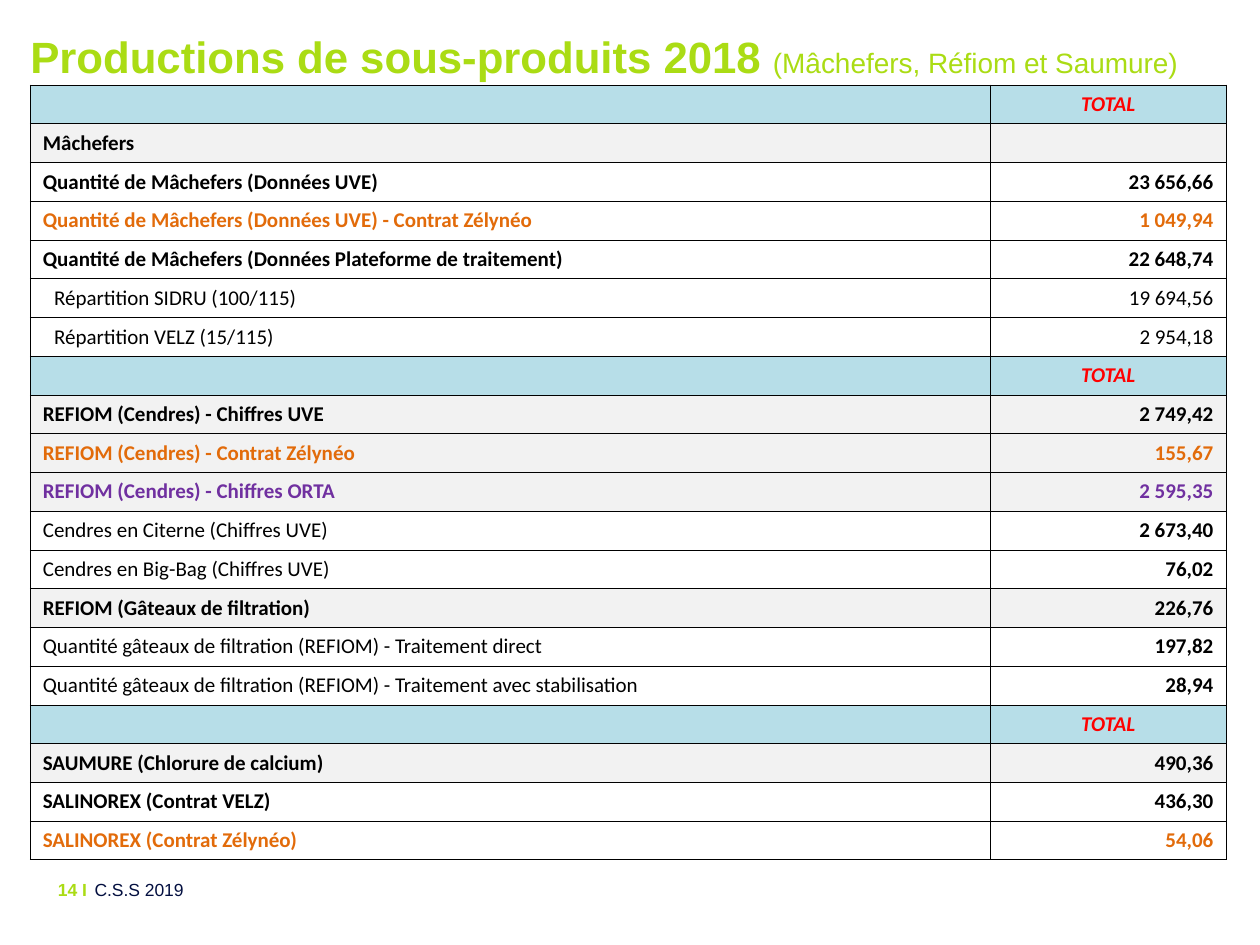
from lxml.etree import SubElement
from pptx import Presentation
from pptx.dml.color import RGBColor
from pptx.enum.text import MSO_ANCHOR as Anchor, PP_ALIGN as Align
from pptx.oxml.ns import qn
from pptx.util import Inches, Pt

WIDTH, HEIGHT = 10, 7.5
GREEN, NAVY, BLACK, RED = "AADC14", "030F40", "000000", "FF0000"
ORANGE, PURPLE = "E26B0A", "7030A0"
BLUE_FILL, GREY_FILL, WHITE_FILL = "B7DEE8", "F2F2F2", "FFFFFF"
LABEL_SHARE = 0.803
TABLE_FONT_SIZE = 12

HEADER = ("", "TOTAL", BLUE_FILL, RED, True, True)


def section(label, value, color=BLACK):
    return label, value, GREY_FILL, color, True, True


def entry(label, value, color=BLACK, bold_label=True, bold_value=True):
    return label, value, WHITE_FILL, color, bold_label, bold_value


ROWS = [
    HEADER,
    section("Mâchefers", ""),
    entry("Quantité de Mâchefers (Données UVE)", "23 656,66"),
    entry("Quantité de Mâchefers (Données UVE) - Contrat Zélynéo", "1 049,94", ORANGE),
    entry("Quantité de Mâchefers (Données Plateforme de traitement)", "22 648,74"),
    entry("Répartition SIDRU (100/115)", "19 694,56", BLACK, False, False),
    entry("Répartition VELZ (15/115)", "2 954,18", BLACK, False, False),
    HEADER,
    section("REFIOM (Cendres) - Chiffres UVE", "2 749,42"),
    section("REFIOM (Cendres) - Contrat Zélynéo", "155,67", ORANGE),
    section("REFIOM (Cendres) - Chiffres ORTA", "2 595,35", PURPLE),
    entry("Cendres en Citerne (Chiffres UVE)", "2 673,40", BLACK, False),
    entry("Cendres en Big-Bag (Chiffres UVE)", "76,02", BLACK, False),
    section("REFIOM (Gâteaux de filtration)", "226,76"),
    entry("Quantité gâteaux de filtration (REFIOM) - Traitement direct", "197,82", BLACK, False),
    entry("Quantité gâteaux de filtration (REFIOM) - Traitement avec stabilisation", "28,94", BLACK, False),
    HEADER,
    section("SAUMURE (Chlorure de calcium)", "490,36"),
    entry("SALINOREX (Contrat VELZ)", "436,30"),
    entry("SALINOREX (Contrat Zélynéo)", "54,06", ORANGE),
]


def rgb(color):
    return RGBColor.from_string(color)


def format_run(run, name, size, color, bold=False, italic=False):
    font = run.font
    font.name, font.size = name, Pt(size)
    font.bold, font.italic = bold, italic
    font.color.rgb = rgb(color)


def add_text(slide, box, parts, align=Align.LEFT, anchor=Anchor.TOP, right=0):
    shape = slide.shapes.add_textbox(*map(Inches, box))
    frame = shape.text_frame
    frame.word_wrap = True
    frame.vertical_anchor = anchor
    frame.margin_left = frame.margin_top = frame.margin_bottom = 0
    frame.margin_right = Inches(right)
    paragraph = frame.paragraphs[0]
    paragraph.alignment = align
    for text, size, color, bold in parts:
        run = paragraph.add_run()
        run.text = text
        format_run(run, "Arial", size, color, bold)


def add_title(slide, box):
    parts = [
        ("Productions de sous-produits 2018 ", 25, GREEN, True),
        ("(Mâchefers, Réfiom et Saumure)", 16, GREEN, False),
    ]
    add_text(slide, box, parts, anchor=Anchor.MIDDLE)


def add_footer(slide, box):
    left, top, width, height = box
    number_width = 0.075 * WIDTH
    add_text(slide, (left + number_width, top, width - number_width, height),
             [("C.S.S 2019", 10, NAVY, False)])
    add_text(slide, (left, top, number_width, height),
             [("14 I", 10, GREEN, True)], Align.RIGHT, right=0.06)


def add_borders(cell):
    properties = cell._tc.get_or_add_tcPr()
    for side in ("lnL", "lnR", "lnT", "lnB"):
        line = SubElement(properties, qn(f"a:{side}"), w=str(Pt(0.5)))
        fill = SubElement(line, qn("a:solidFill"))
        SubElement(fill, qn("a:srgbClr"), val=BLACK)


def fill_cell(cell, text, fill, color, bold, italic, align):
    add_borders(cell)
    cell.fill.solid()
    cell.fill.fore_color.rgb = rgb(fill)
    cell.vertical_anchor = Anchor.MIDDLE
    paragraph = cell.text_frame.paragraphs[0]
    paragraph.alignment = align
    if text:
        paragraph.text = text
        format_run(paragraph.runs[0], "Calibri", TABLE_FONT_SIZE, color, bold, italic)
    else:
        SubElement(paragraph._p, qn("a:endParaRPr"), sz=str(TABLE_FONT_SIZE * 100))


def add_production_table(slide, box):
    left, top, width, height = box
    table = slide.shapes.add_table(len(ROWS), 2, *map(Inches, box)).table
    table.first_row = table.horz_banding = False
    table.columns[0].width = Inches(width * LABEL_SHARE)
    table.columns[1].width = Inches(width * (1 - LABEL_SHARE))
    for index, (label, value, fill, color, bold_label, bold_value) in enumerate(ROWS):
        row = table.rows[index]
        row.height = Inches(height / len(ROWS))
        label_cell, value_cell = row.cells
        is_header = fill == BLUE_FILL
        fill_cell(label_cell, label, fill, color, bold_label, is_header, Align.LEFT)
        fill_cell(value_cell, value, fill, color, bold_value, is_header,
                  Align.CENTER if is_header else Align.RIGHT)
        if label.startswith("Répartition"):
            label_cell.margin_left = Inches(0.19)


def main():
    presentation = Presentation()
    presentation.slide_width, presentation.slide_height = Inches(WIDTH), Inches(HEIGHT)
    slide = presentation.slides.add_slide(presentation.slide_layouts[6])
    left, width = 0.024 * WIDTH, 0.949 * WIDTH
    add_title(slide, (left, 0.028 * HEIGHT, width, 0.063 * HEIGHT))
    add_production_table(slide, (left, 0.09 * HEIGHT, width, 0.82 * HEIGHT))
    add_footer(slide, (0, 0.93 * HEIGHT, 0.807 * WIDTH, 0.068 * HEIGHT))
    presentation.save("out.pptx")


if __name__ == "__main__":
    main()
